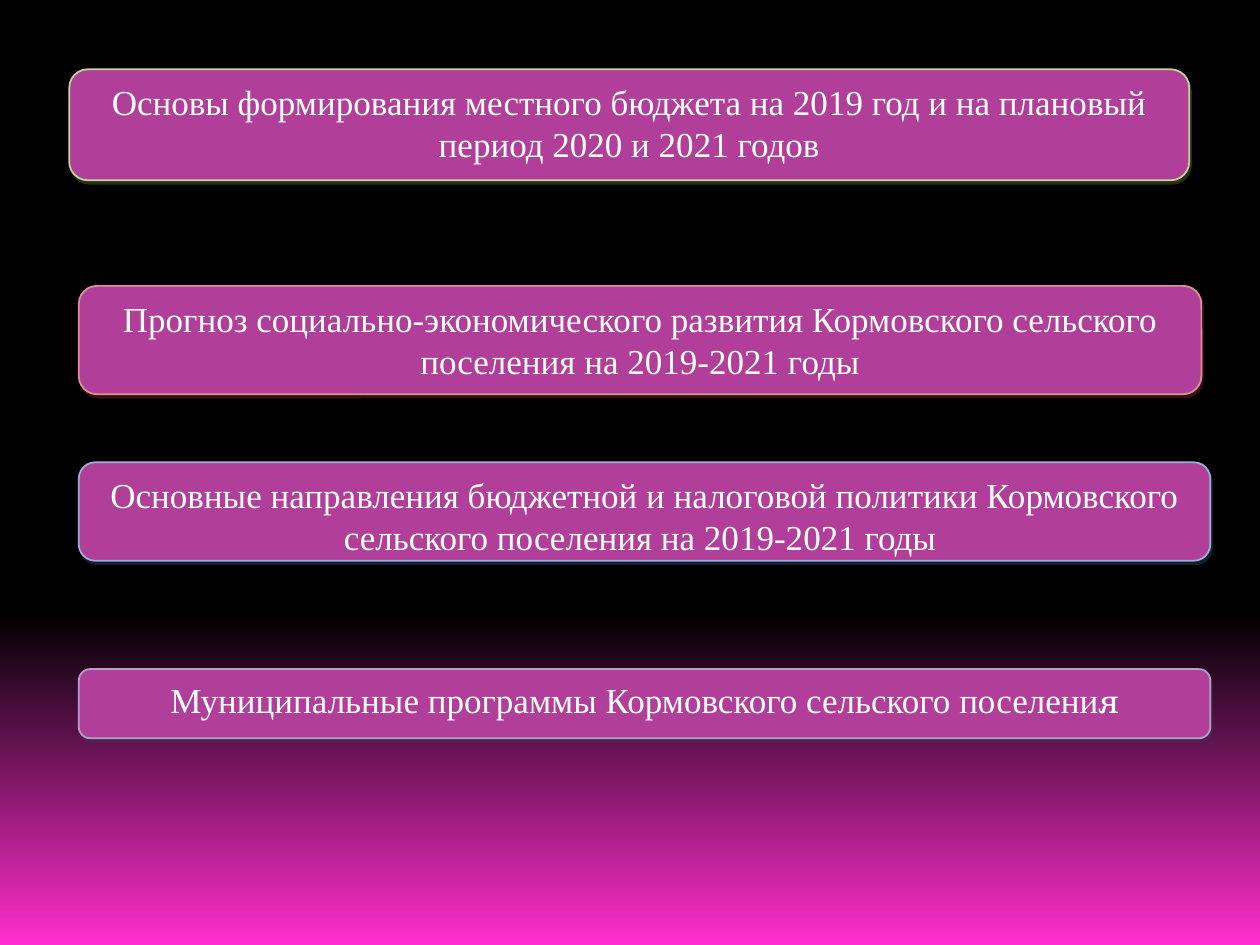
from copy import deepcopy

from lxml.etree import SubElement
from pptx import Presentation
from pptx.dml.color import RGBColor
from pptx.enum.shapes import MSO_SHAPE
from pptx.enum.text import MSO_ANCHOR, PP_ALIGN
from pptx.oxml.ns import qn
from pptx.util import Pt

BLACK = RGBColor(0x00, 0x00, 0x00)
WHITE = RGBColor(0xFF, 0xFF, 0xFF)
PINK = RGBColor(0xFF, 0x2F, 0xCD)
PURPLE = RGBColor(0xB1, 0x3F, 0x9A)
GREEN, DARK_GREEN = RGBColor(0xC2, 0xD6, 0x9B), RGBColor(0x4E, 0x61, 0x28)
RED, DARK_RED = RGBColor(0xD9, 0x95, 0x94), RGBColor(0x62, 0x24, 0x23)
BLUE, DARK_BLUE = RGBColor(0x95, 0xB3, 0xD7), RGBColor(0x24, 0x3F, 0x60)
VIOLET, DARK_VIOLET = RGBColor(0xB2, 0xA1, 0xC7), RGBColor(0x3F, 0x31, 0x51)

BODY_FONT = "Times New Roman"
LAST_LETTER_FONT = "TeX Gyre Schola"

# left, top, width, height, line colour, shadow colour, (text, font) runs
BUDGET_BASES = [
    (39.6, 39.6, 640, 63.4, GREEN, DARK_GREEN,
     [("Основы формирования местного бюджета на 2019 год и на плановый "
       "период 2020 и 2021 годов", BODY_FONT)]),
    (45, 163.4, 641.5, 61.9, RED, DARK_RED,
     [("Прогноз социально-экономического развития Кормовского сельского "
       "поселения на 2019-2021 годы", BODY_FONT)]),
    (45, 264.2, 646.6, 56.2, BLUE, DARK_BLUE,
     [("Основные направления бюджетной и налоговой политики Кормовского "
       "сельского поселения на 2019-2021 годы ", BODY_FONT)]),
    (45, 382.3, 646.6, 39.6, VIOLET, DARK_VIOLET,
     [("Муниципальные программы Кормовского сельского поселени", BODY_FONT),
      ("я", LAST_LETTER_FONT)]),
]


def set_background(s):
    """Black down to 65 % of the height, then fading to pink."""
    fill = s.background.fill
    fill.gradient()
    fill.gradient_angle = 270
    for stop, position, color in zip(fill.gradient_stops, (0.65, 1), (BLACK, PINK)):
        stop.position = position
        stop.color.rgb = color
    stops = s.element.find(".//" + qn("a:gsLst"))
    first = deepcopy(stops[0])
    first.set("pos", "0")
    stops.insert(0, first)


def add_shadow(sp, color):
    """Hard half-transparent shadow, 2.2 pt to the lower right."""
    sp.shadow.inherit = False
    effects = sp.element.spPr.find(qn("a:effectLst"))
    shadow = SubElement(effects, qn("a:outerShdw"), blurRad="0",
                        dist=str(Pt(2.2)), dir=str(63 * 60000),
                        algn="ctr", rotWithShape="0")
    clr = SubElement(shadow, qn("a:srgbClr"), val=str(color))
    SubElement(clr, qn("a:alpha"), val="50000")


def add_box(s, left, top, width, height, line, shadow, runs):
    sp = s.shapes.add_shape(MSO_SHAPE.ROUNDED_RECTANGLE,
                            Pt(left), Pt(top), Pt(width), Pt(height))
    sp.fill.solid()
    sp.fill.fore_color.rgb = PURPLE
    sp.line.color.rgb = line
    sp.line.width = Pt(1)
    add_shadow(sp, shadow)

    tf = sp.text_frame
    tf.word_wrap = True
    tf.vertical_anchor = MSO_ANCHOR.TOP
    p = tf.paragraphs[0]
    p.alignment = PP_ALIGN.CENTER
    p.space_after = Pt(10)
    for text, font in runs:
        r = p.add_run()
        r.text = text
        r.font.name = font
        r.font.size = Pt(20)
        r.font.color.rgb = WHITE


def main():
    prs = Presentation()
    prs.slide_width, prs.slide_height = Pt(720), Pt(540)
    s = prs.slides.add_slide(prs.slide_layouts[6])
    set_background(s)
    for box in BUDGET_BASES:
        add_box(s, *box)
    prs.save("out.pptx")


if __name__ == "__main__":
    main()
